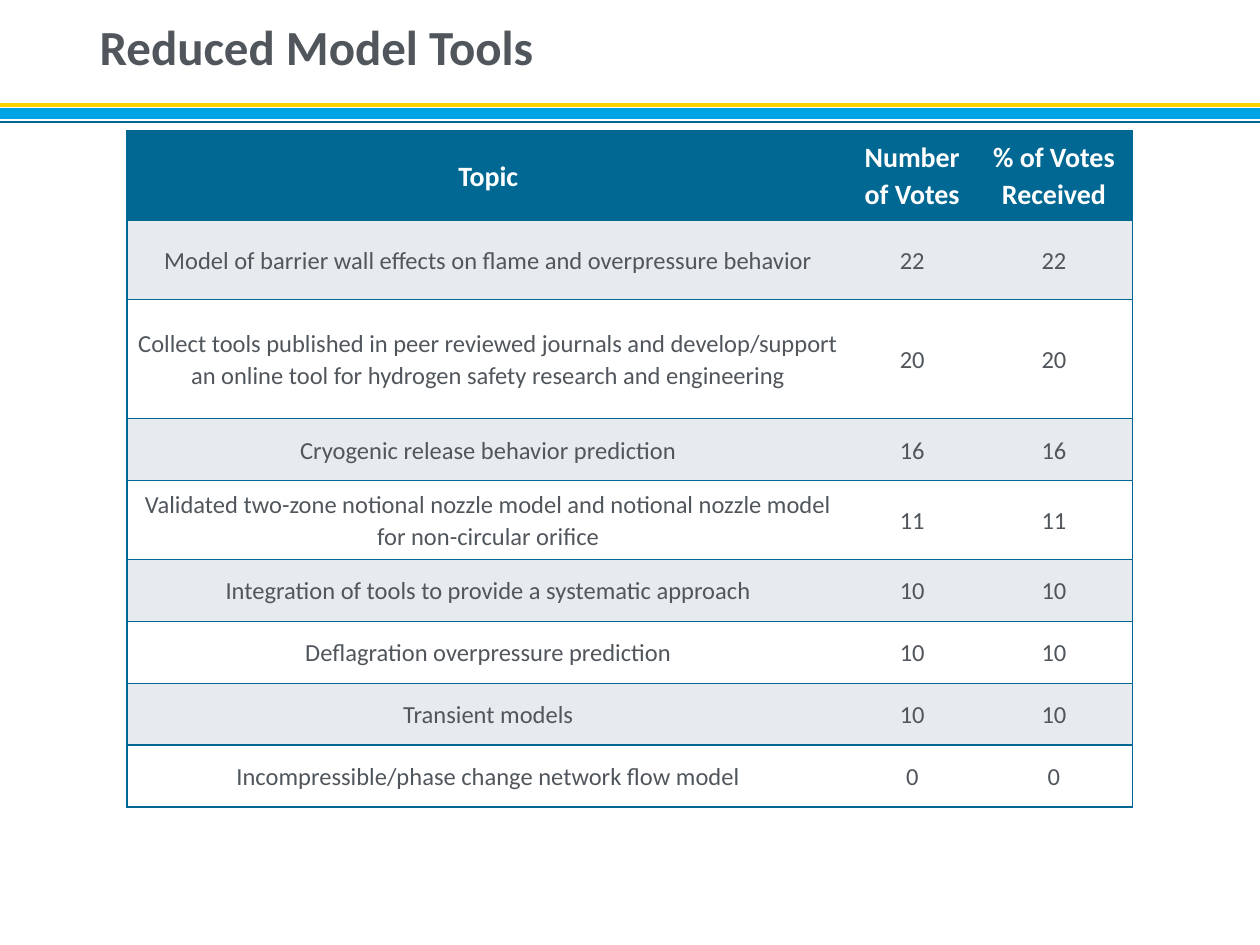
import pptx
import pptx.dml.color
import pptx.enum.shapes
import pptx.enum.text
import pptx.oxml.ns
import pptx.util
from lxml import etree

Pt = pptx.util.Pt
ALIGN = pptx.enum.text.PP_ALIGN
MIDDLE = pptx.enum.text.MSO_ANCHOR.MIDDLE
BLUE, GREY, WHITE, BAND = "006892", "50565C", "FFFFFF", "E7EBEE"


def paint(color_format, color):
    color_format.rgb = pptx.dml.color.RGBColor.from_string(color)


def format_text(paragraph, alignment, spacing, size, bold, color):
    paragraph.alignment = alignment
    paragraph.line_spacing = spacing
    font_format = {"name": "Calibri", "size": Pt(size), "bold": bold}
    for name, value in font_format.items():
        setattr(paragraph.font, name, value)
    paint(paragraph.font.color, color)


presentation = pptx.Presentation()
presentation.slide_width, presentation.slide_height = Pt(720), Pt(540)
slide = presentation.slides.add_slide(presentation.slide_layouts[5])

# Coloured rules under the title
for top, color, width in [(64.8, "00A4E4", 6), (69.84, BLUE, 1.5), (59.76, "FFD200", 2.25)]:
    rule = slide.shapes.add_connector(
        pptx.enum.shapes.MSO_CONNECTOR.STRAIGHT, Pt(0), Pt(top), Pt(720), Pt(top))
    rule.line.width = Pt(width)
    paint(rule.line.color, color)
    properties = rule._element.spPr
    etree.SubElement(properties, pptx.oxml.ns.qn("a:effectLst"))

# Title
title = slide.shapes.title
title_format = {"left": Pt(49.68), "top": Pt(0), "width": Pt(620.64), "height": Pt(56.88)}
for name, value in title_format.items():
    setattr(title, name, value)
title.text_frame.text = "Reduced Model Tools"
title.text_frame.vertical_anchor = MIDDLE
format_text(title.text_frame.paragraphs[0], ALIGN.LEFT, 0.9, 28, True, GREY)

# Table of votes; the votes total 100, so each share equals its count
topics = [
    ("Model of barrier wall effects on flame and overpressure behavior", 22, 45.36),
    ("Collect tools published in peer reviewed journals and develop/support "
     "an online tool for hydrogen safety research and engineering", 20, 68.1),
    ("Cryogenic release behavior prediction", 16, 35.4),
    ("Validated two-zone notional nozzle model and notional nozzle model "
     "for non-circular orifice", 11, 45.1),
    ("Integration of tools to provide a systematic approach", 10, 35.4),
    ("Deflagration overpressure prediction", 10, 35.4),
    ("Transient models", 10, 35.4),
    ("Incompressible/phase change network flow model", 0, 35.4),
]
rows = [(("Topic", "Number of Votes", "% of Votes Received"), 51.1)]
rows += [((topic, str(votes), str(votes)), height) for topic, votes, height in topics]
column_widths = [412.56, 72, 90]

frame = slide.shapes.add_table(
    len(rows), len(column_widths), Pt(72.72), Pt(74.7),
    Pt(sum(column_widths)), Pt(sum(height for _, height in rows)))
table = frame.table
for column, width in zip(table.columns, column_widths):
    column.width = Pt(width)

cell_format = {"vertical_anchor": MIDDLE, "margin_left": Pt(5), "margin_right": Pt(5),
               "margin_top": 0, "margin_bottom": 0}
for row_index, (texts, height) in enumerate(rows):
    table.rows[row_index].height = Pt(height)
    header = row_index == 0
    fill = BLUE if header else BAND if row_index % 2 else WHITE
    for column_index, text in enumerate(texts):
        cell = table.cell(row_index, column_index)
        cell.text = text
        for name, value in cell_format.items():
            setattr(cell, name, value)
        format_text(cell.text_frame.paragraphs[0], ALIGN.CENTER, 1.07,
                    16 if header else 14, header, WHITE if header else GREY)

        # Horizontal rules everywhere, vertical ones on the outside only
        sides = {"L": column_index == 0, "R": column_index == len(texts) - 1,
                 "T": True, "B": True}
        for side, visible in sides.items():
            border = etree.SubElement(cell._tc.get_or_add_tcPr(),
                                      pptx.oxml.ns.qn(f"a:ln{side}"), w=str(Pt(1)))
            if visible:
                solid = etree.SubElement(border, pptx.oxml.ns.qn("a:solidFill"))
                etree.SubElement(solid, pptx.oxml.ns.qn("a:srgbClr"), val=BLUE)
            else:
                etree.SubElement(border, pptx.oxml.ns.qn("a:noFill"))
        cell.fill.solid()
        paint(cell.fill.fore_color, fill)

presentation.save("out.pptx")
